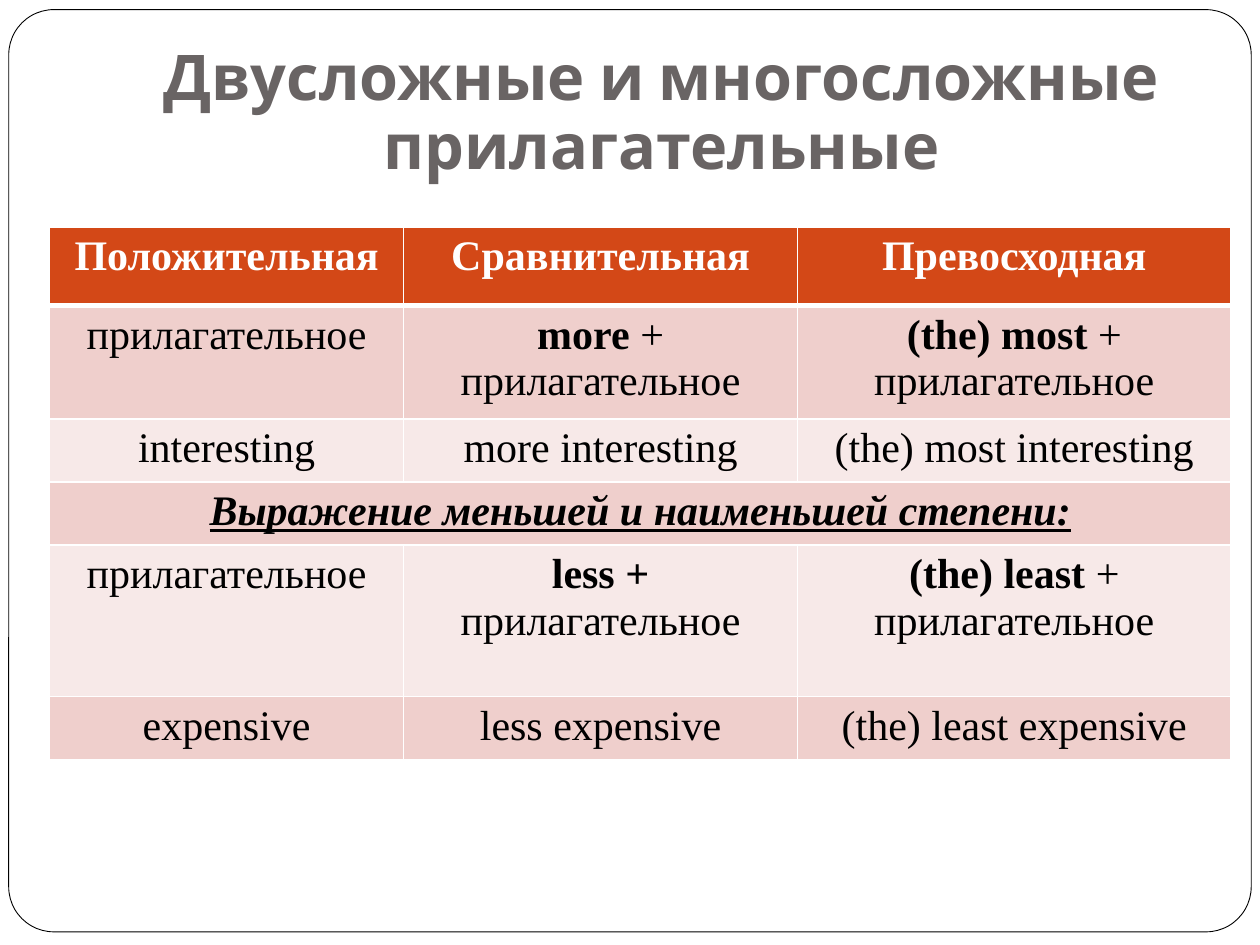
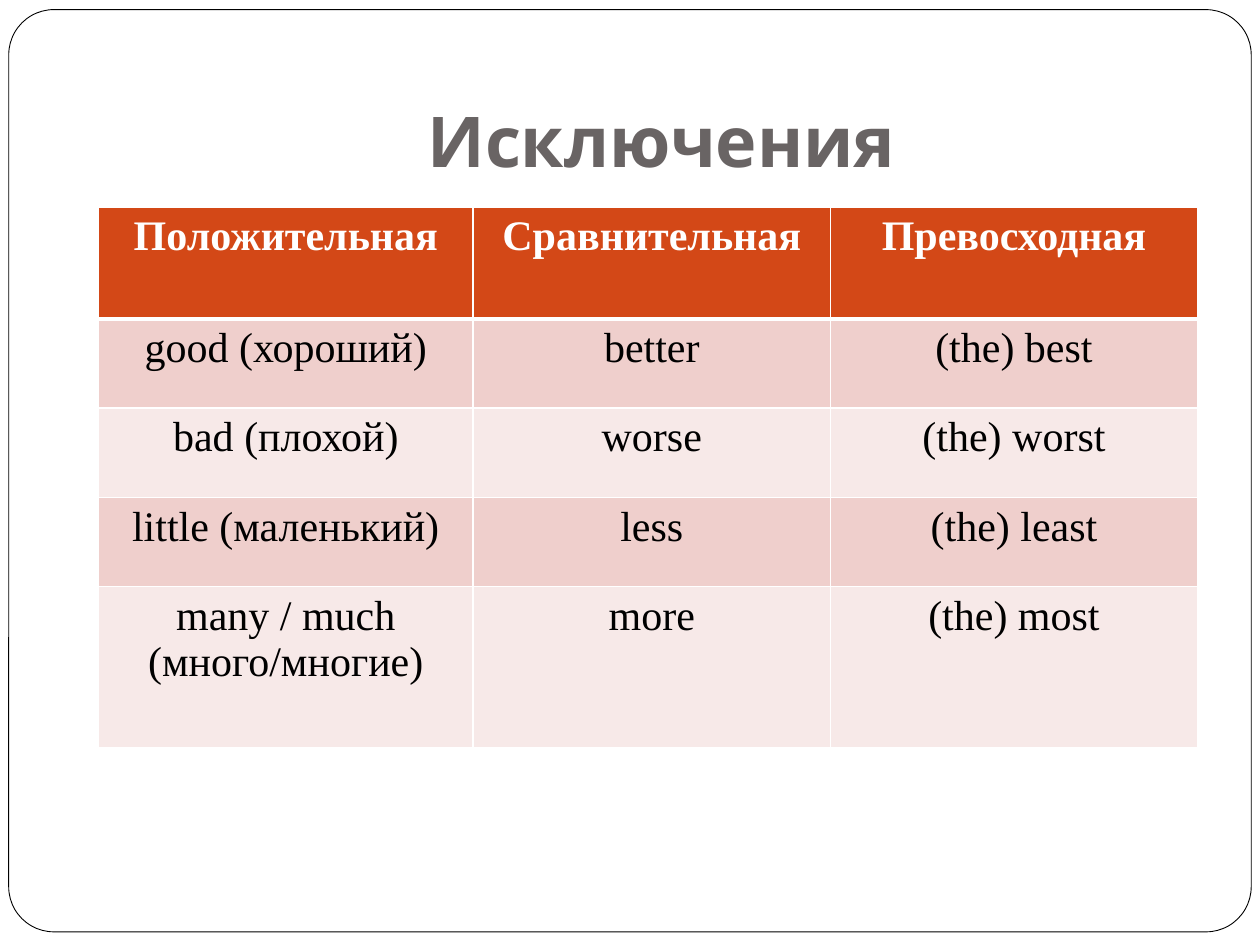
import pptx
import pptx.util
import pptx.dml.color
import pptx.enum.shapes
import pptx.enum.text
import pptx.oxml
import pptx.oxml.ns
from pptx.util import Pt

ANCHOR = pptx.enum.text.MSO_ANCHOR
ALIGN = pptx.enum.text.PP_ALIGN

# Shared look
WHITE, BLACK, TITLE_GREY = "FFFFFF", "000000", "696464"
HEADER_FILL = "D34817"
BAND_FILLS = ("EFCFCC", "F7E9E8")
TITLE_FONT, TABLE_FONT = "Cabin", "Times New Roman"
HEADINGS = ["Положительная", "Сравнительная", "Превосходная"]


def color(hex_string):
    return pptx.dml.color.RGBColor.from_string(hex_string)


def set_attributes(target, values):
    for name, value in values.items():
        setattr(target, name, value)


class Deck:
    """Holds the style and the slide being built."""

    def __init__(self):
        self.presentation = pptx.Presentation()
        self.presentation.slide_width = Pt(720)
        self.presentation.slide_height = Pt(540)
        self.slide = None

    def new_slide(self, title, title_size):
        layout = self.presentation.slide_layouts[6]
        self.slide = self.presentation.slides.add_slide(layout)
        self.frame()
        self.title(title, title_size)

    def frame(self):
        shape = self.slide.shapes.add_shape(
            pptx.enum.shapes.MSO_SHAPE.ROUNDED_RECTANGLE,
            Pt(5), Pt(5.5), Pt(710), Pt(527))
        shape.adjustments[0] = 0.049
        shape.shadow.inherit = False
        shape.fill.solid()
        shape.fill.fore_color.rgb = color(WHITE)
        shape.line.color.rgb = color(BLACK)
        shape.line.width = Pt(0.5)

    def run(self, paragraph, text, hex_color, **font_values):
        run = paragraph.add_run()
        run.text = text
        run.font.color.rgb = color(hex_color)
        set_attributes(run.font, font_values)

    def title(self, text, size):
        box = self.slide.shapes.add_textbox(Pt(72), Pt(21.6), Pt(612), Pt(90))
        set_attributes(box.text_frame, {
            "word_wrap": True, "vertical_anchor": ANCHOR.BOTTOM,
            "margin_left": Pt(7.2), "margin_right": Pt(7.2),
            "margin_top": Pt(3.6), "margin_bottom": Pt(7.2)})
        paragraph = box.text_frame.paragraphs[0]
        set_attributes(paragraph, {"alignment": ALIGN.CENTER, "line_spacing": 0.9})
        self.run(paragraph, text, TITLE_GREY, name=TITLE_FONT, size=Pt(size), bold=True)

    def borders(self, cell, top, bottom):
        properties = cell._tc.get_or_add_tcPr()
        for side, width in (("L", 1), ("R", 1), ("T", top), ("B", bottom)):
            properties.append(pptx.oxml.parse_xml(
                f'<a:ln{side} {pptx.oxml.ns.nsdecls("a")} w="{Pt(width)}">'
                f'<a:solidFill><a:srgbClr val="{WHITE}"/></a:solidFill></a:ln{side}>'))

    def cell(self, cell, content, row):
        """Content is a string or a list of (text, font values) runs."""
        header = row == 0
        self.borders(cell, top=3 if row == 1 else 1, bottom=3 if header else 1)
        cell.fill.solid()
        cell.fill.fore_color.rgb = color(HEADER_FILL if header else BAND_FILLS[(row - 1) % 2])
        paragraph = cell.text_frame.paragraphs[0]
        paragraph.alignment = ALIGN.CENTER
        runs = [(content, {})] if isinstance(content, str) else content
        for text, font_values in runs:
            values = {"name": TABLE_FONT, "size": Pt(24), "bold": header, **font_values}
            self.run(paragraph, text, WHITE if header else BLACK, **values)

    def table(self, left, top, widths, heights, body):
        """A body row with a single entry spans all columns."""
        rows = [HEADINGS] + body
        table = self.slide.shapes.add_table(
            len(rows), len(widths), Pt(left), Pt(top),
            Pt(sum(widths)), Pt(sum(heights))).table
        for column, width in zip(table.columns, widths):
            column.width = Pt(width)
        for row, height in zip(table.rows, heights):
            row.height = Pt(height)
        for row, contents in enumerate(rows):
            if len(contents) == 1:
                table.cell(row, 0).merge(table.cell(row, len(widths) - 1))
            for column, content in enumerate(contents):
                self.cell(table.cell(row, column), content, row)


BOLD = {"bold": True}
EMPHASIS = {"bold": True, "italic": True, "underline": True}

deck = Deck()

# Slide 1: longer adjectives
deck.new_slide("Двусложные и многосложные прилагательные", 36)
deck.table(28.4, 129.6, [202.2, 225.2, 247.6], [45, 60, 34, 34, 86.5, 34], [
    ["прилагательное",
     [("more ", BOLD), ("+ прилагательное", {})],
     [("(the) most ", BOLD), ("+ прилагательное", {})]],
    ["interesting", "more interesting", "(the) most interesting"],
    [[("Выражение меньшей и наименьшей степени:", EMPHASIS)]],
    ["прилагательное",
     [("less + ", BOLD), ("прилагательное", {})],
     [("(the) least ", BOLD), ("+ прилагательное", {})]],
    ["expensive", "less expensive", "(the) least expensive"],
])

# Slide 2: exceptions
deck.new_slide("Исключения", 40)
deck.table(56.4, 118.2, [213.8, 204.5, 209.5], [64, 51, 51, 51, 92], [
    ["good (хороший)", "better", "(the) best"],
    ["bad (плохой)", "worse", "(the) worst"],
    ["little (маленький)", "less", "(the) least"],
    ["many / much (много/многие)", "more", "(the) most"],
])

deck.presentation.save("out.pptx")
